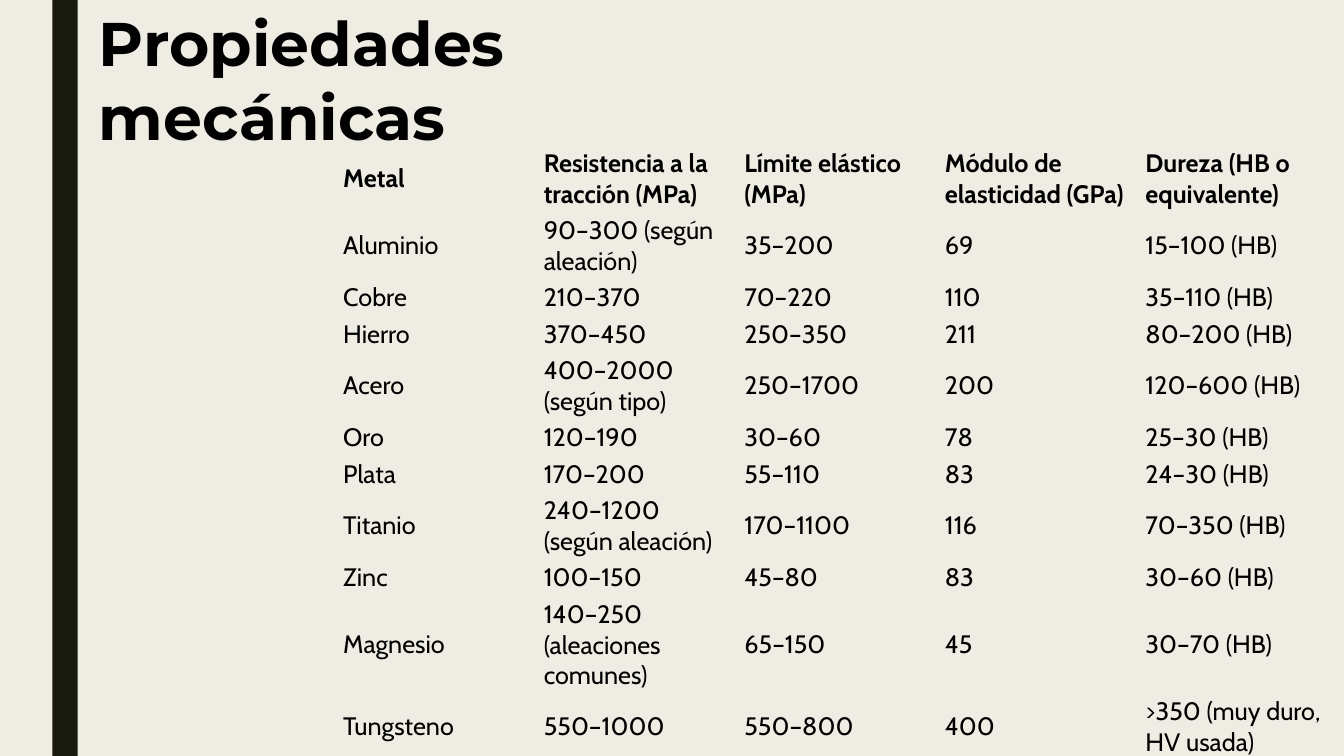
from pptx import Presentation, util as u
from pptx.dml.color import RGBColor
from pptx.enum import shapes, text

NO_STYLE_NO_GRID = "{2D5ABB26-0587-4C30-8999-92F81FD0307C}"

PROPERTIES = [
    ("Metal", "Resistencia a la tracción (MPa)", "Límite elástico (MPa)",
     "Módulo de elasticidad (GPa)", "Dureza (HB o equivalente)"),
    ("Aluminio", "90–300 (según aleación)", "35–200", "69", "15–100 (HB)"),
    ("Cobre", "210–370", "70–220", "110", "35–110 (HB)"),
    ("Hierro", "370–450", "250–350", "211", "80–200 (HB)"),
    ("Acero", "400–2000 (según tipo)", "250–1700", "200", "120–600 (HB)"),
    ("Oro", "120–190", "30–60", "78", "25–30 (HB)"),
    ("Plata", "170–200", "55–110", "83", "24–30 (HB)"),
    ("Titanio", "240–1200 (según aleación)", "170–1100", "116", "70–350 (HB)"),
    ("Zinc", "100–150", "45–80", "83", "30–60 (HB)"),
    ("Magnesio", "140–250 (aleaciones comunes)", "65–150", "45", "30–70 (HB)"),
    ("Tungsteno", "550–1000", "550–800", "400", ">350 (muy duro, HV usada)"),
]
ROW_LINES = [2, 2, 1, 1, 2, 1, 1, 2, 1, 3, 2]


def color(hex_code):
    return RGBColor.from_string(hex_code)


class MetalsSlide:
    heading_font, body_font = "Montserrat", "Cabin"
    paper, ink, band = "EFEDE3", "000000", "191B0E"

    def __init__(self, deck):
        self.slide = deck.slides.add_slide(deck.slide_layouts[5])
        background = self.slide.background.fill
        background.solid()
        background.fore_color.rgb = color(self.paper)

    def add_words(self, paragraph, words, font, size, bold):
        paragraph.alignment = text.PP_ALIGN.LEFT
        run = paragraph.add_run()
        run.text = words
        run.font.name = font
        run.font.size = u.Pt(size)
        run.font.bold = bold
        run.font.color.rgb = color(self.ink)

    def side_band(self, left, width, height):
        band = self.slide.shapes.add_shape(
            shapes.MSO_SHAPE.RECTANGLE, u.Cm(left), 0, u.Cm(width), height)
        band.shadow.inherit = False
        band.fill.solid()
        band.fill.fore_color.rgb = color(self.band)
        band.line.fill.background()

    def title(self, words, left, top, width, height):
        heading = self.slide.shapes.title
        heading.left, heading.top = u.Cm(left), u.Cm(top)
        heading.width, heading.height = u.Cm(width), u.Cm(height)
        frame = heading.text_frame
        frame.word_wrap = True
        frame.auto_size = text.MSO_AUTO_SIZE.SHAPE_TO_FIT_TEXT
        frame.vertical_anchor = text.MSO_ANCHOR.TOP
        self.add_words(frame.paragraphs[0], words, self.heading_font, 44, True)

    def table(self, rows, row_lines, left, top, width, height):
        frame = self.slide.shapes.add_table(
            len(rows), len(rows[0]), u.Cm(left), u.Cm(top), u.Cm(width), u.Cm(height))
        grid = frame.table
        grid.horz_banding = False
        grid._tbl.tblPr.find("{*}tableStyleId").text = NO_STYLE_NO_GRID
        for r, (row, lines) in enumerate(zip(rows, row_lines)):
            grid.rows[r].height = u.Cm(0.15 + 0.67 * lines)
            for c, words in enumerate(row):
                cell = grid.cell(r, c)
                cell.fill.background()
                cell.vertical_anchor = text.MSO_ANCHOR.MIDDLE
                cell.margin_left = cell.margin_right = u.Cm(0.15)
                cell.margin_top = cell.margin_bottom = u.Cm(0.08)
                self.add_words(cell.text_frame.paragraphs[0], words,
                               self.body_font, 18, r == 0)
        frame.height = u.Cm(height)


def main():
    deck = Presentation()
    deck.slide_width, deck.slide_height = u.Cm(33.87), u.Cm(19.05)
    metals = MetalsSlide(deck)
    metals.side_band(1.32, 0.64, deck.slide_height)
    metals.title("Propiedades mecánicas", 2.24, 0, 12.34, 4.01)
    metals.table(PROPERTIES, ROW_LINES, 8.5, 3.66, 25.27, 15.39)
    deck.save("out.pptx")


if __name__ == "__main__":
    main()
